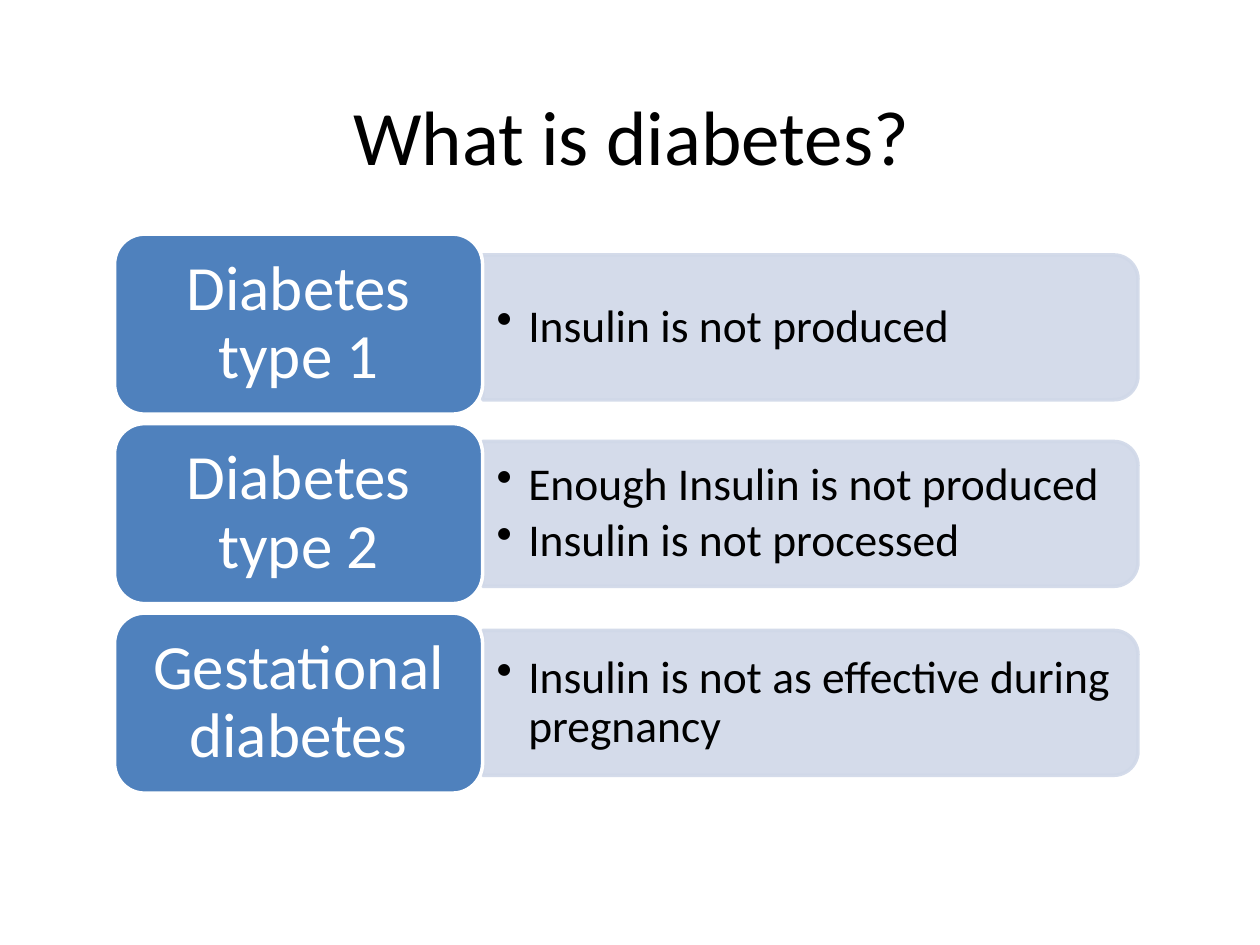
from dataclasses import dataclass

import lxml.etree
import pptx
import pptx.dml.color
import pptx.enum.shapes
import pptx.enum.text
import pptx.oxml.ns
import pptx.util

Cm = pptx.util.Cm
Pt = pptx.util.Pt
RGBColor = pptx.dml.color.RGBColor
MSO_SHAPE = pptx.enum.shapes.MSO_SHAPE
PP_ALIGN = pptx.enum.text.PP_ALIGN
qn = pptx.oxml.ns.qn

BLACK = RGBColor(0x00, 0x00, 0x00)
WHITE = RGBColor(0xFF, 0xFF, 0xFF)
BLUE = RGBColor(0x4F, 0x81, 0xBD)
PALE_BLUE = RGBColor(0xD0, 0xD8, 0xE8)

LABEL_LEFT, LABEL_TOP = 2.31, 4.72
LABEL_WIDTH, LABEL_HEIGHT = 7.42, 3.63
ROW_PITCH = 3.82
PANEL_LEFT = LABEL_LEFT + LABEL_WIDTH
PANEL_WIDTH, PANEL_HEIGHT = 13.21, 2.92
DETAILS_WIDTH, DETAILS_HEIGHT = 13.06, 2.62


@dataclass(frozen=True)
class DiabetesKind:
    name: str
    details: tuple[str, ...]
    panel_middle: float


KINDS = (
    DiabetesKind("Diabetes type 1", ("Insulin is not produced",), 6.6),
    DiabetesKind(
        "Diabetes type 2",
        ("Enough Insulin is not produced", "Insulin is not processed"),
        10.36,
    ),
    DiabetesKind(
        "Gestational diabetes",
        ("Insulin is not as effective during pregnancy",),
        14.17,
    ),
)


def style_font(paragraph, size: float, color: RGBColor) -> None:
    paragraph.font.name = "Calibri"
    paragraph.font.size = Pt(size)
    paragraph.font.color.rgb = color


def prepare_frame(frame, side: float, vertical: float) -> None:
    frame.word_wrap = True
    frame.vertical_anchor = pptx.enum.text.MSO_ANCHOR.MIDDLE
    frame.margin_left = frame.margin_right = Cm(side)
    frame.margin_top = frame.margin_bottom = Cm(vertical)


def add_bullet(paragraph) -> None:
    properties = paragraph._p.get_or_add_pPr()
    properties.set("marL", str(Cm(0.64)))
    properties.set("indent", str(Cm(-0.64)))
    lxml.etree.SubElement(properties, qn("a:buChar"), char="•")


def add_title(slide, wording: str) -> None:
    title = slide.shapes.add_textbox(Cm(1.3), Cm(1.12), Cm(22.86), Cm(3.18))
    prepare_frame(title.text_frame, 0.25, 0.13)
    heading = title.text_frame.paragraphs[0]
    heading.text = wording
    heading.alignment = PP_ALIGN.CENTER
    style_font(heading, 44, BLACK)


def add_block(slide, preset, left: float, top: float, width: float,
              height: float, fill: RGBColor, line: RGBColor):
    block = slide.shapes.add_shape(
        preset, Cm(left), Cm(top), Cm(width), Cm(height))
    block.shadow.inherit = False
    block.fill.solid()
    block.fill.fore_color.rgb = fill
    block.line.color.rgb = line
    block.line.width = Pt(2)
    return block


def add_panel(slide, middle: float) -> None:
    center = PANEL_LEFT + PANEL_WIDTH / 2
    panel = add_block(
        slide, MSO_SHAPE.ROUND_2_SAME_RECTANGLE,
        center - PANEL_HEIGHT / 2, middle - PANEL_WIDTH / 2,
        PANEL_HEIGHT, PANEL_WIDTH, PALE_BLUE, PALE_BLUE)
    panel.rotation = 90
    for color in panel._element.spPr.iter(qn("a:srgbClr")):
        lxml.etree.SubElement(color, qn("a:alpha"), val="90000")


def add_details(slide, details: tuple[str, ...], middle: float) -> None:
    box = slide.shapes.add_textbox(
        Cm(PANEL_LEFT), Cm(middle - DETAILS_HEIGHT / 2),
        Cm(DETAILS_WIDTH), Cm(DETAILS_HEIGHT))
    frame = box.text_frame
    prepare_frame(frame, 0.28, 0.13)
    for index, detail in enumerate(details):
        paragraph = frame.add_paragraph() if index else frame.paragraphs[0]
        paragraph.text = detail
        paragraph.level = 1
        paragraph.line_spacing = 0.9
        paragraph.space_after = Pt(4)
        add_bullet(paragraph)
        style_font(paragraph, 26, BLACK)


def add_label(slide, name: str, top: float) -> None:
    label = add_block(
        slide, MSO_SHAPE.ROUNDED_RECTANGLE, LABEL_LEFT, top,
        LABEL_WIDTH, LABEL_HEIGHT, BLUE, WHITE)
    prepare_frame(label.text_frame, 0.55, 0.34)
    paragraph = label.text_frame.paragraphs[0]
    paragraph.text = name
    paragraph.alignment = PP_ALIGN.CENTER
    paragraph.line_spacing = 0.9
    style_font(paragraph, 36, WHITE)


def main() -> None:
    presentation = pptx.Presentation()
    presentation.slide_width = Cm(25.4)
    presentation.slide_height = Cm(19.05)
    slide = presentation.slides.add_slide(presentation.slide_layouts[6])
    add_title(slide, "What is diabetes?")
    for row, kind in enumerate(KINDS):
        add_panel(slide, kind.panel_middle)
        add_details(slide, kind.details, kind.panel_middle)
        add_label(slide, kind.name, LABEL_TOP + row * ROW_PITCH)
    presentation.save("out.pptx")


if __name__ == "__main__":
    main()
